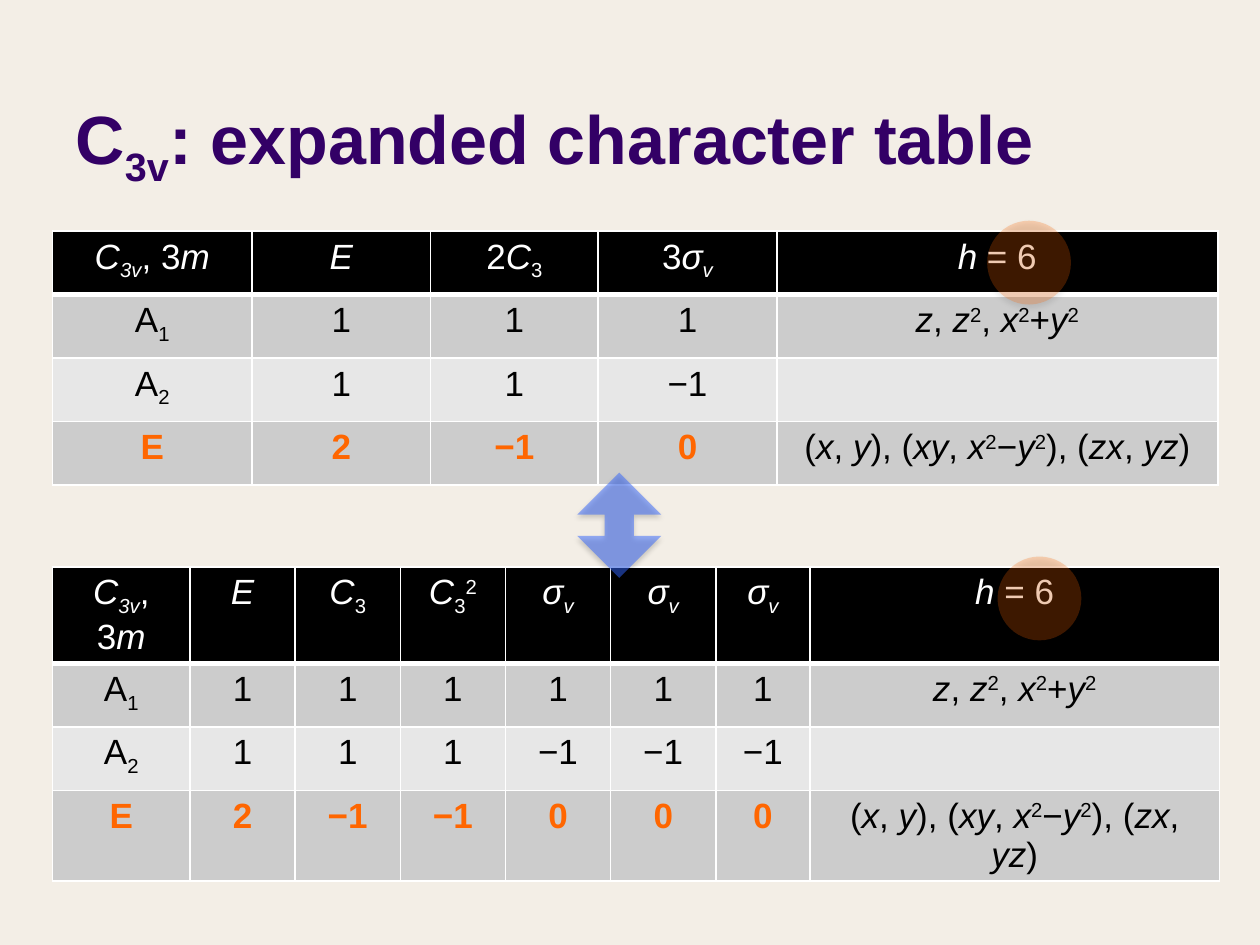
from lxml.etree import SubElement
from pptx import Presentation
from pptx.dml.color import RGBColor
from pptx.enum.shapes import MSO_SHAPE
from pptx.enum.text import MSO_ANCHOR, MSO_AUTO_SIZE, PP_ALIGN
from pptx.oxml.ns import qn
from pptx.util import Cm, Pt

LEFT = 1.06
ROW_H = 1.28
BASIS = ["", "/z/, /z/^2^, /x/^2^+/y/^2^", "",
         "(/x/, /y/), (/xy/, /x/^2^−/y/^2^), (/zx/, /yz/)"]
GROUP, ORDER = "/C_3v_/, 3/m/", "/h/ = 6"
CLASSES = [
    [GROUP, "/E/", "2/C/_3_", "3/σ_v_/", ORDER],
    ["A_1_", "1", "1", "1", BASIS[1]],
    ["A_2_", "1", "1", "−1", BASIS[2]],
    ["E", "2", "−1", "0", BASIS[3]],
]
OPERATIONS = [
    [GROUP, "/E/", "/C/_3_", "/C/_3_^2^"] + ["/σ_v_/"] * 3 + [ORDER],
    ["A_1_"] + ["1"] * 6 + [BASIS[1]],
    ["A_2_"] + ["1"] * 3 + ["−1"] * 3 + [BASIS[2]],
    ["E", "2", "−1", "−1"] + ["0"] * 3 + [BASIS[3]],
]


def rgb(value):
    """Turn a hex string into a colour."""
    return RGBColor.from_string(value)


def split_markup(text):
    """Yield (text, italic, baseline) where / marks italic, _ subscript, ^ superscript."""
    part, italic, base = "", False, 0
    for ch in text:
        if ch not in "/_^":
            part += ch
            continue
        if part:
            yield part, italic, base
        part = ""
        if ch == "/":
            italic = not italic
        else:
            base = 0 if base else {"_": -25000, "^": 30000}[ch]
    if part:
        yield part, italic, base


def write(p, text, size, color, bold):
    """Fill a paragraph with formatted runs from marked-up text."""
    for part, italic, base in split_markup(text):
        r = p.add_run()
        r.text = part
        r.font.name = "Arial"
        r.font.size = Pt(size)
        r.font.bold = bold
        r.font.italic = italic
        r.font.color.rgb = rgb(color)
        if base:
            r.font._element.set("baseline", str(base))


def add_title(s, text):
    """Place and fill the title placeholder."""
    sp = s.shapes.title
    sp.left, sp.top, sp.width, sp.height = Cm(1.27), Cm(0.33), Cm(22.86), Cm(3.61)
    tf = sp.text_frame
    tf.auto_size = MSO_AUTO_SIZE.NONE
    tf.vertical_anchor = MSO_ANCHOR.BOTTOM
    p = tf.paragraphs[0]
    p.alignment = PP_ALIGN.LEFT
    write(p, text, 39, "330066", True)


def set_borders(cell, top, bottom):
    """Give a cell white borders, with top and bottom widths in points."""
    tc_pr = cell._tc.get_or_add_tcPr()
    for side, width in (("L", 1), ("R", 1), ("T", top), ("B", bottom)):
        ln = SubElement(tc_pr, qn(f"a:ln{side}"), w=str(Pt(width)))
        SubElement(SubElement(ln, qn("a:solidFill")), qn("a:srgbClr"), val="FFFFFF")


def add_character_table(s, top, widths, rows):
    """Add a character table with a black header and a highlighted E row."""
    frame = s.shapes.add_table(len(rows), len(widths), Cm(LEFT), Cm(top),
                               Cm(sum(widths)), Cm(ROW_H * len(rows)))
    table = frame.table
    table.horz_banding = False
    for col, width in zip(table.columns, widths):
        col.width = Cm(width)
    fills = ["000000", "CCCCCC", "E7E7E7", "CCCCCC"]
    for i, row in enumerate(rows):
        for j, text in enumerate(row):
            cell = table.cell(i, j)
            set_borders(cell, 3 if i == 1 else 1, 3 if i == 0 else 1)
            cell.fill.solid()
            cell.fill.fore_color.rgb = rgb(fills[i])
            marked = i == 3 and j < len(row) - 1
            color = "FFFFFF" if i == 0 else "FF6600" if marked else "000000"
            p = cell.text_frame.paragraphs[0]
            p.alignment = PP_ALIGN.CENTER
            write(p, text, 20, color, marked)


def add_marker(s, kind, left, top, width, height, color, alpha):
    """Add a translucent shape with a soft shadow below it."""
    sp = s.shapes.add_shape(kind, Cm(left), Cm(top), Cm(width), Cm(height))
    sp.line.fill.background()
    sp.fill.solid()
    sp.fill.fore_color.rgb = rgb(color)
    sp_pr = sp._element.spPr
    clr = sp_pr.find(qn("a:solidFill")).find(qn("a:srgbClr"))
    SubElement(clr, qn("a:alpha"), val=str(alpha * 1000))
    sp.shadow.inherit = False
    shadow = SubElement(sp_pr.find(qn("a:effectLst")), qn("a:outerShdw"),
                        blurRad=str(Pt(3.1)), dist=str(Pt(1.8)),
                        dir="5400000", rotWithShape="0")
    clr = SubElement(shadow, qn("a:srgbClr"), val="000000")
    SubElement(clr, qn("a:alpha"), val="35000")
    return sp


def main():
    """Build the slide and save it."""
    prs = Presentation()
    prs.slide_width, prs.slide_height = Cm(25.4), Cm(19.05)
    s = prs.slides.add_slide(prs.slide_layouts[5])
    s.background.fill.solid()
    s.background.fill.fore_color.rgb = rgb("F3EEE6")
    add_title(s, "C_3v_: expanded character table")
    add_character_table(s, 11.43, [2.77] + [2.12] * 5 + [1.9, 8.25], OPERATIONS)
    add_character_table(s, 4.66, [4.02, 3.6, 3.38, 3.6, 8.89], CLASSES)
    arrow = add_marker(s, MSO_SHAPE.UP_DOWN_ARROW, 11.64, 9.53, 1.69, 2.12, "3366FF", 50)
    arrow.adjustments[0], arrow.adjustments[1] = 0.5, 0.35
    for left, top in ((20.11, 11.22), (19.9, 4.45)):
        add_marker(s, MSO_SHAPE.OVAL, left, top, 1.69, 1.69, "FF6600", 24)
    prs.save("out.pptx")


if __name__ == "__main__":
    main()
